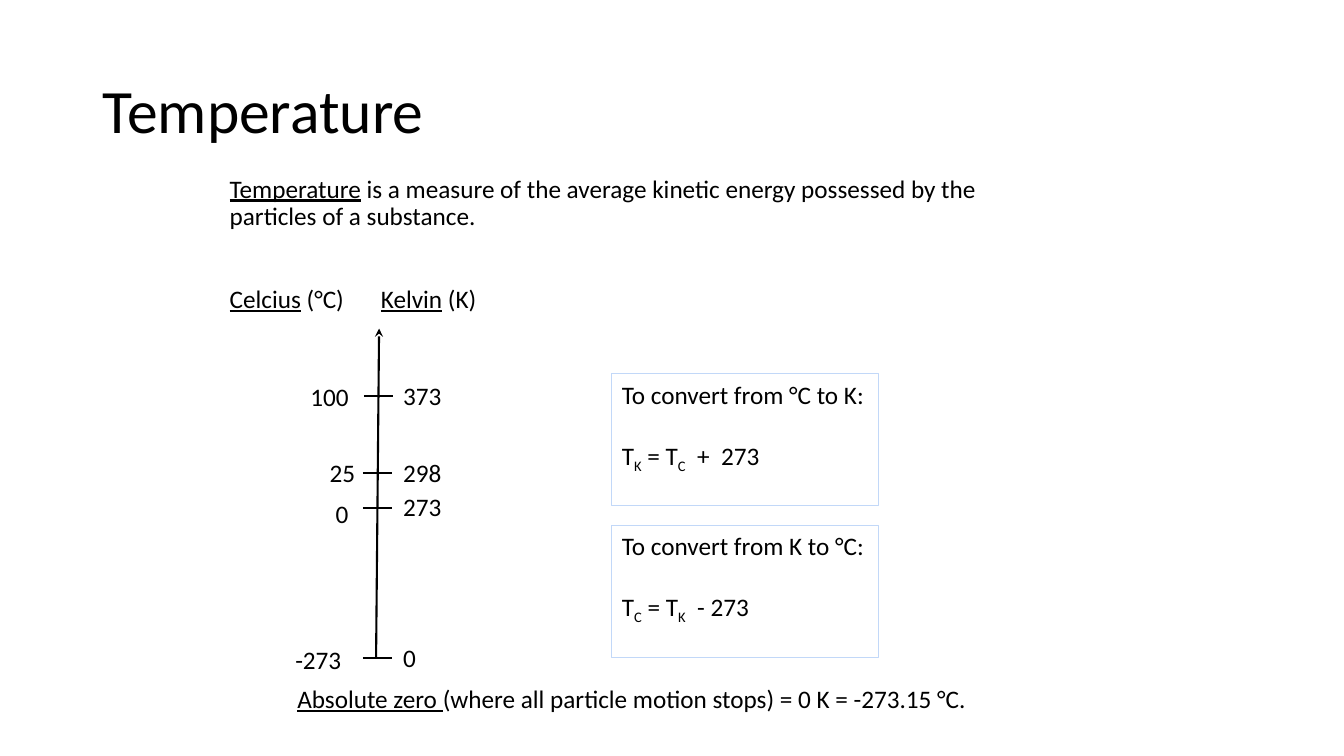
from pptx import Presentation
from pptx.dml.color import RGBColor
from pptx.enum.shapes import MSO_CONNECTOR, MSO_SHAPE
from pptx.enum.text import MSO_ANCHOR
from pptx.oxml.ns import qn
from pptx.util import Inches, Pt
from lxml.etree import SubElement

BLACK = RGBColor(0x00, 0x00, 0x00)
PALE_BLUE = RGBColor(0xC2, 0xD8, 0xF8)

PLAIN, UNDER, SUB = {}, {"underline": True}, {"baseline": "-25000"}

# Celsius label, its left, top and width; kelvin label and its top; tick left and height
MARKS = [
    ("100", 2.98, 3.73, 0.59, "373", 3.72, 3.61, 3.93),
    ("25", 3.17, 4.49, 0.46, "298", 4.49, 3.6, 4.69),
    ("0", 3.23, 4.89, 0.33, "273", 4.83, 3.6, 5.04),
    ("-273", 2.83, 6.34, 0.71, "0", 6.32, 3.6, 6.53),
]


def fill_text(tf, paragraphs, size=18, wrap=True, anchor=MSO_ANCHOR.TOP):
    """Each paragraph is (format values, [(text, run style), ...])."""
    for name, value in {"word_wrap": wrap, "vertical_anchor": anchor}.items():
        setattr(tf, name, value)
    for i, (spacing, runs) in enumerate(paragraphs):
        p = tf.paragraphs[0] if i == 0 else tf.add_paragraph()
        for name, value in spacing.items():
            setattr(p, name, value)
        for text, style in runs:
            r = p.add_run()
            r.text = text
            r.font.color.rgb = BLACK
            font = {"name": "Calibri", "size": Pt(size),
                    "underline": style.get("underline")}
            for name, value in font.items():
                setattr(r.font, name, value)
            if "baseline" in style:
                r.font._element.set("baseline", style["baseline"])


def add_text(s, box, paragraphs, **options):
    tb = s.shapes.add_textbox(*map(Inches, box))
    fill_text(tb.text_frame, paragraphs, **options)


def add_line(s, start, end, arrow=False):
    line = s.shapes.add_connector(MSO_CONNECTOR.STRAIGHT,
                                  *map(Inches, start + end))
    line.line.color.rgb = BLACK
    line.line.width = Pt(1.5)
    if arrow:
        SubElement(line.line._get_or_add_ln(), qn("a:tailEnd"), type="stealth")
    SubElement(line._element.spPr, qn("a:effectLst"))


def add_heading(s, box):
    add_text(s, box, [({"line_spacing": 0.9}, [("Temperature", PLAIN)])],
             size=44, anchor=MSO_ANCHOR.MIDDLE)


def add_definition(s, box):
    """The definition, and the column headings of the scale below it."""
    add_text(s, box, [
        ({"line_spacing": 0.9, "space_before": Pt(10)}, [
            ("Temperature", UNDER),
            (" is a measure of the average kinetic energy possessed by the "
             "particles of a substance.", PLAIN)]),
        ({"line_spacing": 0.9, "space_before": Pt(40)}, [
            ("Celcius", UNDER), (" (°C)\t", PLAIN),
            ("Kelvin", UNDER), (" (K)", PLAIN)]),
    ])


def add_scale(s, box):
    """The vertical axis with its ticks and labels, in a box given by its corner."""
    left, top = box[:2]
    width, height = box[2:]
    add_line(s, (left + 0.9, top + height), (left + 0.93, top), arrow=True)
    for celsius, c_left, c_top, c_width, kelvin, k_top, tick, y in MARKS:
        dx, dy = left - 2.83, top - 3.26
        add_line(s, (tick + dx, y + dy), (tick + dx + 0.29, y + dy))
        add_text(s, (c_left + dx, c_top + dy, c_width, 0.4),
                 [({}, [(celsius, PLAIN)])], wrap=False)
        k_width = 0.2 + 0.13 * len(kelvin)
        add_text(s, (left + width - 0.59, k_top + dy, k_width, 0.4),
                 [({}, [(kelvin, PLAIN)])], wrap=False)


def add_conversion(s, box, source, target, result, operand, shift):
    sp = s.shapes.add_shape(MSO_SHAPE.RECTANGLE, *map(Inches, box))
    sp.shadow.inherit = False
    sp.fill.background()
    sp.line.color.rgb = PALE_BLUE
    sp.line.width = Pt(0.75)
    fill_text(sp.text_frame, [
        ({"alignment": 1}, [(f"To convert from {source} to {target}:", PLAIN)]),
        ({"alignment": 1, "space_before": Pt(22)}, [
            ("T", PLAIN), (result, SUB), (" = T", PLAIN), (operand, SUB),
            (shift, PLAIN)]),
    ])


def add_absolute_zero(s, box):
    add_text(s, box, [({}, [
        ("Absolute zero ", UNDER),
        ("(where all particle motion stops) = 0 K = -273.15 °C.", PLAIN)])])


def main():
    prs = Presentation()
    prs.slide_width, prs.slide_height = Inches(13.33), Inches(7.5)
    s = prs.slides.add_slide(prs.slide_layouts[6])
    add_heading(s, (0.92, 0.4, 11.5, 1.45))
    add_definition(s, (2.18, 1.7, 8.17, 1.47))
    add_scale(s, (2.83, 3.26, 1.66, 3.27))
    add_conversion(s, (6.07, 3.71, 2.64, 1.31), "°C", "K", "K", "C", "  +  273")
    add_conversion(s, (6.07, 5.21, 2.64, 1.31), "K", "°C", "C", "K", "  - 273")
    add_absolute_zero(s, (2.85, 6.73, 6.92, 0.4))
    prs.save("out.pptx")


if __name__ == "__main__":
    main()
